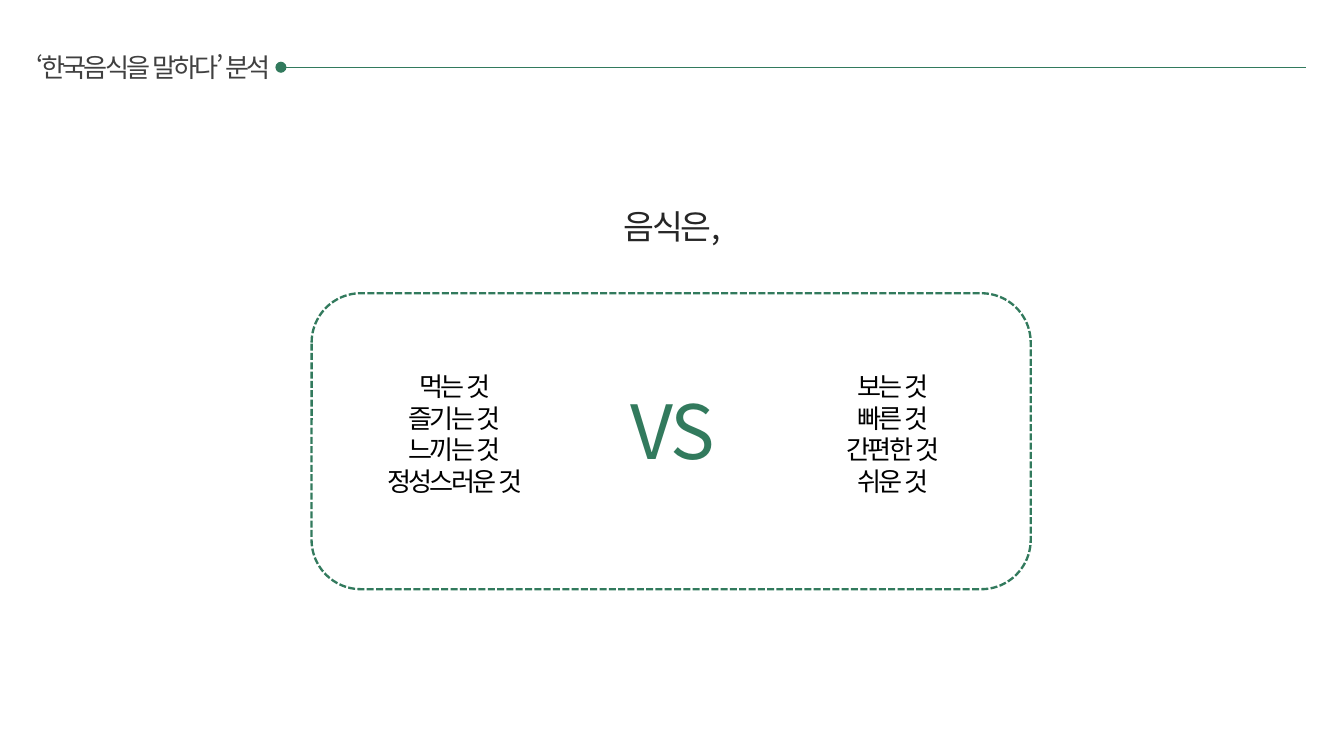
from dataclasses import dataclass

from lxml import etree
from pptx import Presentation
from pptx.dml.color import RGBColor
from pptx.enum.dml import MSO_LINE_DASH_STYLE as Dash
from pptx.enum.shapes import MSO_CONNECTOR as Connector, MSO_SHAPE as Shape
from pptx.enum.text import MSO_AUTO_SIZE as AutoSize, PP_ALIGN as Align
from pptx.oxml.ns import qn
from pptx.slide import Slide
from pptx.util import Cm, Pt


@dataclass(frozen=True)
class Theme:
    font: str = "Noto Sans CJK KR"
    spacing: int = -150  # hundredths of a point
    green: str = "327A5D"
    heading: str = "404040"
    topic: str = "262626"
    body: str = "000000"
    body_size: int = 14
    topic_size: int = 18
    versus_size: int = 40


@dataclass(frozen=True)
class Label:
    left: float
    top: float
    width: float
    height: float
    lines: tuple[str, ...]
    size: int
    color: str


THEME = Theme()
COLUMN_TOP, COLUMN_WIDTH, COLUMN_HEIGHT = 6.88, 7.39, 3.25

LABELS = (
    Label(0.3, 0.84, 5.21, 0.86, ("‘한국음식을 말하다’ 분석",),
          THEME.body_size, THEME.heading),
    Label(9.91, 3.76, 5.59, 1.02, ("음식은,",), THEME.topic_size, THEME.topic),
    Label(4.9, COLUMN_TOP, COLUMN_WIDTH, COLUMN_HEIGHT,
          ("먹는 것", "즐기는 것", "느끼는 것", "정성스러운 것"),
          THEME.body_size, THEME.body),
    Label(13.18, COLUMN_TOP, COLUMN_WIDTH, COLUMN_HEIGHT,
          ("보는 것", "빠른 것", "간편한 것", "쉬운 것"),
          THEME.body_size, THEME.body),
    Label(11.33, 7.14, 2.77, 1.96, ("VS",), THEME.versus_size, THEME.green),
)


def add_label(slide: Slide, label: Label) -> None:
    box = slide.shapes.add_textbox(
        Cm(label.left), Cm(label.top), Cm(label.width), Cm(label.height))
    frame = box.text_frame
    frame.word_wrap = True
    frame.auto_size = AutoSize.SHAPE_TO_FIT_TEXT
    frame.text = "\n".join(label.lines)
    for paragraph in frame.paragraphs:
        paragraph.alignment = Align.CENTER
        for run in paragraph.runs:
            font = run.font
            font.size = Pt(label.size)
            font.name = THEME.font
            font.color.rgb = RGBColor.from_string(label.color)
            # Korean typeface and tight letter spacing
            properties = run._r.get_or_add_rPr()
            properties.set("lang", "ko-KR")
            properties.set("spc", str(THEME.spacing))
            east_asian = etree.SubElement(properties, qn("a:ea"))
            east_asian.set("typeface", THEME.font)


def add_heading_rule(slide: Slide) -> None:
    rule = slide.shapes.add_connector(
        Connector.STRAIGHT, Cm(5.31), Cm(1.27), Cm(24.69), Cm(1.27))
    rule.line.color.rgb = RGBColor.from_string(THEME.green)
    rule.line.width = Pt(0.75)
    etree.SubElement(rule.line._get_or_add_ln(), qn("a:headEnd")).set("type", "oval")
    etree.SubElement(rule._element.spPr, qn("a:effectLst"))


def add_frame(slide: Slide) -> None:
    frame = slide.shapes.add_shape(
        Shape.ROUNDED_RECTANGLE, Cm(5.89), Cm(5.54), Cm(13.59), Cm(5.59))
    frame.shadow.inherit = False
    frame.fill.background()
    frame.line.color.rgb = RGBColor.from_string(THEME.green)
    frame.line.width = Pt(1.25)
    frame.line.dash_style = Dash.SQUARE_DOT


def main() -> None:
    presentation = Presentation()
    presentation.slide_width, presentation.slide_height = Cm(25.4), Cm(14.28)
    slide = presentation.slides.add_slide(presentation.slide_layouts[6])

    # Heading line, texts, then the dashed frame around the comparison
    add_heading_rule(slide)
    for label in LABELS:
        add_label(slide, label)
    add_frame(slide)

    presentation.save("out.pptx")


if __name__ == "__main__":
    main()
